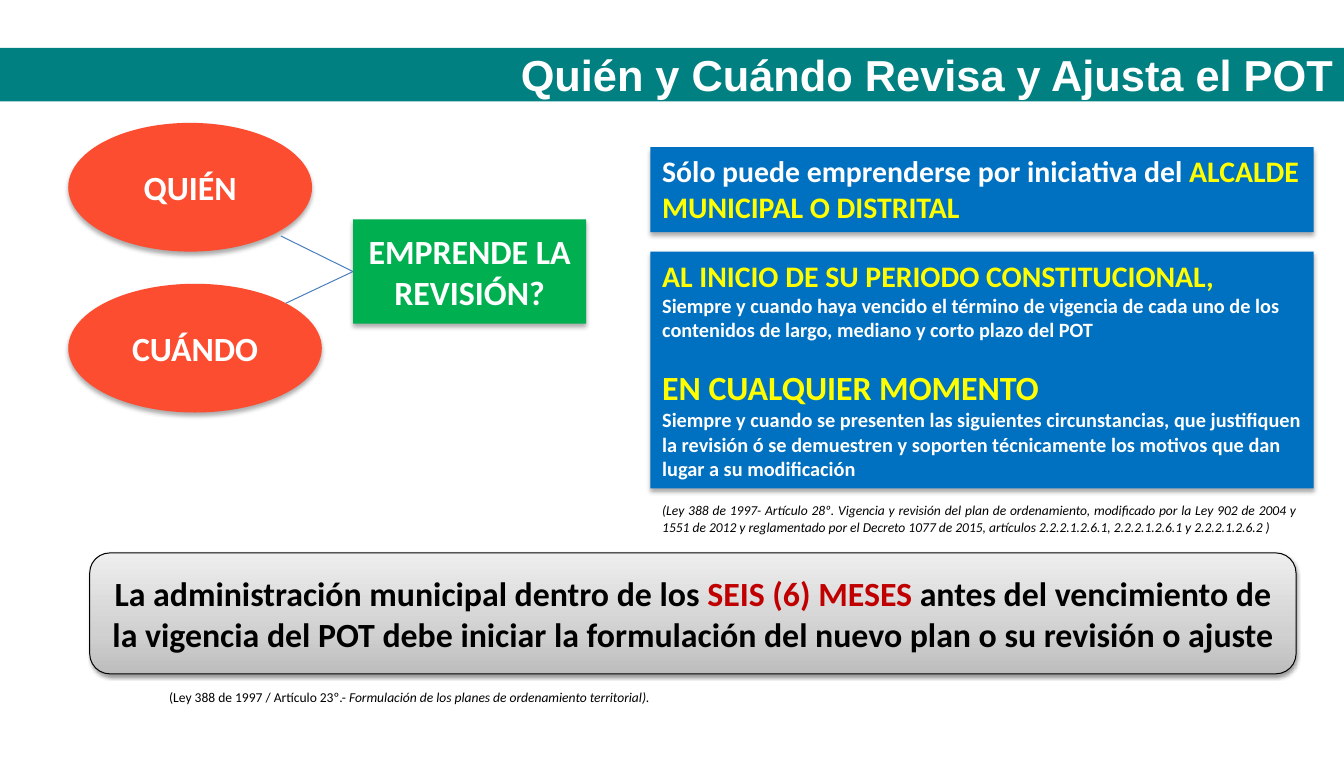
from lxml import etree
from pptx import Presentation
from pptx.dml.color import RGBColor
from pptx.enum import shapes, text
from pptx.oxml import ns
from pptx.util import Inches, Pt

WHITE = RGBColor(0xFF, 0xFF, 0xFF)
BLACK = RGBColor(0x00, 0x00, 0x00)
TEAL = RGBColor(0x00, 0x80, 0x80)
BLUE = RGBColor(0x00, 0x70, 0xC0)
GREEN = RGBColor(0x00, 0xB0, 0x50)
ORANGE = RGBColor(0xFC, 0x4D, 0x30)
YELLOW = RGBColor(0xFF, 0xFF, 0x00)
RED = RGBColor(0xC0, 0x00, 0x00)
LINK = RGBColor(0x4B, 0x7E, 0xBC)
GRAYS = [(0, "BDBDBD"), (35, "D1D1D1"), (100, "EEEEEE")]

KIND = shapes.MSO_SHAPE
ALIGN = text.PP_ALIGN
ANCHOR = text.MSO_ANCHOR


def node(parent, tag, **attrs):
    item = etree.SubElement(parent, ns.qn(tag))
    for key, value in attrs.items():
        item.set(key, str(value))
    return item


def write(shape, paras, align=ALIGN.LEFT, anchor=ANCHOR.TOP, face="Calibri",
          pad=(0.12, 0.06)):
    """Fill a shape; each paragraph is a list of (text, size, colour, style)."""
    frame = shape.text_frame
    frame.word_wrap = True
    frame.vertical_anchor = anchor
    frame.margin_left = frame.margin_right = Inches(pad[0])
    frame.margin_top = frame.margin_bottom = Inches(pad[1])
    for i, runs in enumerate(paras):
        para = frame.add_paragraph() if i else frame.paragraphs[0]
        para.alignment = align
        for words, size, color, style in runs:
            run = para.add_run()
            run.text = words
            font = run.font
            font.name, font.size = face, Pt(size)
            font.color.rgb = color
            font.bold, font.italic = style == "b", style == "i"


def block(slide, kind, spot, color=None):
    shape = slide.shapes.add_shape(kind, *map(Inches, spot))
    shape.shadow.inherit = False
    if color is not None:
        shape.fill.solid()
        shape.fill.fore_color.rgb = color
    shape.line.fill.background()
    return shape


def shade(shape, alpha=32, blur=3.5, dist=2.2):
    """Drop a soft black shadow straight down."""
    effects = shape._element.spPr.find(ns.qn("a:effectLst"))
    outer = node(effects, "a:outerShdw", blurRad=Pt(blur), dist=Pt(dist),
                 dir=5400000, rotWithShape=0)
    black = node(outer, "a:srgbClr", val="000000")
    node(black, "a:alpha", val=alpha * 1000)


def blend(shape, stops):
    shape.fill.gradient()
    shape.fill.gradient_angle = 90
    items = shape._element.spPr.find(ns.qn("a:gradFill")).find(ns.qn("a:gsLst"))
    for old in list(items):
        items.remove(old)
    for place, color in stops:
        node(node(items, "a:gs", pos=place * 1000), "a:srgbClr", val=color)


def label(slide, kind, spot, color, words):
    shape = block(slide, kind, spot, color)
    shade(shape)
    write(shape, [[(words, 25, WHITE, "b")]], ALIGN.CENTER, ANCHOR.MIDDLE)
    return shape


def panel(slide, spot, paras):
    shape = block(slide, KIND.RECTANGLE, spot, BLUE)
    shade(shape)
    write(shape, paras)
    return shape


def note(slide, spot, runs, align):
    write(slide.shapes.add_textbox(*map(Inches, spot)), [runs], align)


def join(slide, x, y, box):
    """Draw a line from a point to the middle of the box's left side."""
    line = slide.shapes.add_connector(
        shapes.MSO_CONNECTOR.STRAIGHT, Inches(x), Inches(y), box.left, box.top)
    line.end_connect(box, 1)
    line.line.color.rgb = LINK
    line.line.width = Pt(0.75)
    node(line._element.spPr, "a:effectLst")


def main():
    deck = Presentation()
    deck.slide_width = Inches(441 / 32)
    deck.slide_height = Inches(63 / 8)
    slide = deck.slides.add_slide(deck.slide_layouts[6])

    title = block(slide, KIND.RECTANGLE, (0, 0.49, 13.78, 0.55), TEAL)
    write(title, [[("Quién y Cuándo Revisa y Ajusta el POT", 32, WHITE, "b")]],
          ALIGN.RIGHT, ANCHOR.MIDDLE, "Arial", (0.1, 0.05))

    panel(slide, (6.67, 1.51, 6.8, 0.87), [[
        ("Sólo puede emprenderse por iniciativa del ", 22, WHITE, "b"),
        ("ALCALDE MUNICIPAL O DISTRITAL", 22, YELLOW, "b")]])
    start = label(slide, KIND.RECTANGLE, (3.62, 2.25, 2.39, 1.07), GREEN,
                  "EMPRENDE LA REVISIÓN?")
    label(slide, KIND.OVAL, (0.7, 1.26, 2.5, 1.32), ORANGE, "QUIÉN")
    label(slide, KIND.OVAL, (0.7, 2.91, 2.6, 1.32), ORANGE, "CUÁNDO")

    when = panel(slide, (6.67, 2.58, 6.8, 2.43), [
        [("AL INICIO DE SU PERIODO CONSTITUCIONAL,", 22, YELLOW, "b")],
        [("Siempre y cuando haya vencido el término de vigencia de cada uno "
          "de los contenidos de largo, mediano y corto plazo del POT",
          15, WHITE, "b")],
        [("EN CUALQUIER MOMENTO", 25, YELLOW, "b")],
        [("Siempre y cuando se presenten las siguientes circunstancias, que "
          "justifiquen la revisión ó se demuestren y soporten técnicamente "
          "los motivos que dan lugar a su modificación", 15, WHITE, "b")]])
    when.text_frame.paragraphs[2].space_before = Pt(18.3)

    term = block(slide, KIND.ROUNDED_RECTANGLE, (0.92, 5.67, 12.37, 1.24))
    blend(term, GRAYS)
    term.line.color.rgb = BLACK
    term.line.width = Pt(0.75)
    shade(term, 38, 3.1, 1.6)
    write(term, [[
        ("La administración municipal dentro de los ", 25, BLACK, "b"),
        ("SEIS (6) MESES ", 25, RED, "b"),
        ("antes del vencimiento de la vigencia del POT debe iniciar la "
         "formulación del nuevo plan o su revisión o ajuste", 25, BLACK, "b")]],
        ALIGN.CENTER, ANCHOR.MIDDLE)

    note(slide, (6.67, 5.09, 6.74, 0.46), [
        ("(Ley 388 de 1997- Artículo 28º. Vigencia y revisión del plan de "
         "ordenamiento, modificado por la Ley 902 de 2004 y 1551 de 2012 y "
         "reglamentado por el Decreto 1077 de 2015, artículos 2.2.2.1.2.6.1, "
         "2.2.2.1.2.6.1 y 2.2.2.1.2.6.2 )", 10, BLACK, "i")], ALIGN.JUSTIFY)
    join(slide, 2.88, 2.42, start)
    join(slide, 2.93, 3.11, start)
    note(slide, (0.92, 7, 5.86, 0.29), [
        ("(Ley 388 de 1997 / Artículo 23º.- ", 10, BLACK, ""),
        ("Formulación de los planes de ordenamiento territorial).",
         10, BLACK, "i")], ALIGN.RIGHT)

    deck.save("out.pptx")


if __name__ == "__main__":
    main()
